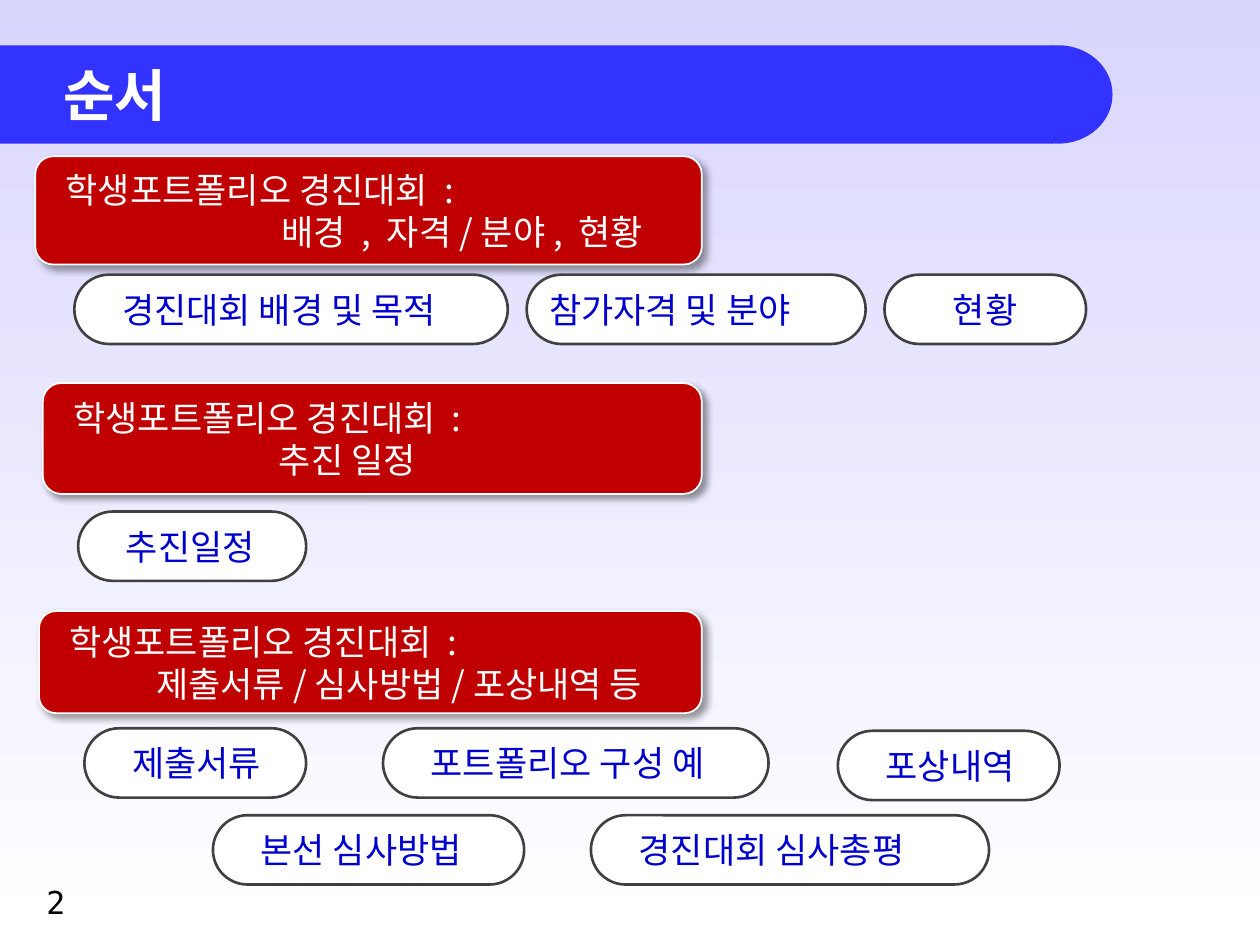
from lxml import etree
from pptx import Presentation, util as u
from pptx.dml.color import RGBColor
from pptx.enum import shapes, text
from pptx.oxml import ns

COLS, ROWS = 100, 75
WIDE, HIGH = u.Inches(10), u.Inches(7.5)
FONT, MONO = "Noto Sans CJK KR", "DejaVu Sans Mono"
LILAC = RGBColor(0xD9, 0xD6, 0xFE)
WHITE = RGBColor(0xFF, 0xFF, 0xFF)
BLACK = RGBColor(0, 0, 0)
BLUE = RGBColor(0x33, 0x33, 0xFF)
NAVY = RGBColor(0, 0, 0xCC)
RED = RGBColor(0xC0, 0, 0)
GRAY = RGBColor(0x40, 0x40, 0x40)
KIND = shapes.MSO_SHAPE
LEFT, MID = text.PP_ALIGN.LEFT, text.PP_ALIGN.CENTER
HEAD = "학생포트폴리오 경진대회  :"
PILL = 5.5

SECTS = [
    ((2.8, 12.4, 52.9, 8.6), "배경  ,  자격 / 분야 ,  현황", 1.91,
     [("경진대회 배경 및 목적", 3.1, 9.4, 34.4, -0.4, LEFT),
      ("참가자격 및 분야", 39, 9.4, 26.9, -0.6, LEFT),
      ("현황", 67.4, 9.4, 16, -0.6, MID)]),
    ((3.4, 30.4, 52.3, 8.8), "추진 일정", 1.83,
     [("추진일정", 2.8, 10.2, 18.1, -0.4, LEFT)]),
    ((3.1, 48.5, 52.6, 8.1), "제출서류 / 심사방법 / 포상내역 등", 0.89,
     [("제출서류", 3.6, 9.3, 17.6, -0.4, LEFT),
      ("포트폴리오 구성 예", 27.3, 9.3, 30.6, -0.4, LEFT),
      ("포상내역", 63.4, 9.5, 17.6, -0.4, LEFT),
      ("본선 심사방법", 13.8, 16.2, 24.7, -0.4, LEFT),
      ("경진대회 심사총평", 43.8, 16.2, 31.6, -0.4, LEFT)]),
]


def place(box):
    x, y, w, h = box
    return (int(x * WIDE / COLS), int(y * HIGH / ROWS),
            int(w * WIDE / COLS), int(h * HIGH / ROWS))


def write(para, words, size, color, font=FONT, bold=False, left=0, first=0, align=LEFT):
    props = para._p.get_or_add_pPr()
    props.set("marL", str(u.Inches(left)))
    props.set("indent", str(u.Inches(first)))
    para.alignment = align
    run = para.add_run()
    run.text = words
    run.font.size, run.font.name, run.font.bold = u.Pt(size), font, bold
    run.font.color.rgb = color
    face = etree.SubElement(run._r.get_or_add_rPr(), ns.qn("a:ea"))
    face.set("typeface", font)


def draw(slide, kind, box, fill, line=None, width=1):
    shape = slide.shapes.add_shape(kind, *place(box))
    shape.shadow.inherit = False
    shape.fill.solid()
    shape.fill.fore_color.rgb = fill
    if line is None:
        shape.line.fill.background()
    else:
        shape.line.color.rgb = line
        shape.line.width = u.Pt(width)
    shape.text_frame.vertical_anchor = text.MSO_ANCHOR.MIDDLE
    return shape


def shade(shape):
    glow = shape._element.spPr.find(ns.qn("a:effectLst"))
    drop = etree.SubElement(glow, ns.qn("a:outerShdw"), blurRad=str(u.Pt(4)),
                            dist=str(u.Pt(3)), dir="2700000", algn="tl", rotWithShape="0")
    tint = etree.SubElement(drop, ns.qn("a:srgbClr"), val=str(BLACK))
    etree.SubElement(tint, ns.qn("a:alpha"), val="40000")


def wash(slide):
    fill = slide.background.fill
    fill.gradient()
    fill.gradient_angle = 270
    for stop, color, pos in zip(fill.gradient_stops, (LILAC, WHITE), (0, 1)):
        stop.color.rgb, stop.position = color, pos


def banner(slide, box, words):
    x, y, w, h = box
    cap = 8.6
    draw(slide, KIND.OVAL, (x + w - cap / 2 - 0.3 + 0.7, y, cap, h), BLUE)
    title = slide.shapes.title
    title.left, title.top, title.width, title.height = place(box)
    title.fill.solid()
    title.fill.fore_color.rgb = BLUE
    frame = title.text_frame
    frame.vertical_anchor = text.MSO_ANCHOR.MIDDLE
    write(frame.paragraphs[0], words, 32, WHITE, bold=True, left=0.4)


def card(slide, box, words, shift):
    shape = draw(slide, KIND.ROUNDED_RECTANGLE, box, RED, WHITE)
    shade(shape)
    frame = shape.text_frame
    frame.margin_left = frame.margin_right = frame.margin_top = frame.margin_bottom = 0
    frame.word_wrap = True
    write(frame.paragraphs[0], HEAD, 20, WHITE, first=0.2)
    write(frame.add_paragraph(), words, 20, WHITE, first=shift)


def pill(slide, box, words, first, align):
    shape = draw(slide, KIND.ROUNDED_RECTANGLE, box, WHITE, GRAY, 1.5)
    shape.adjustments[0] = 0.5
    shape.text_frame.word_wrap = False
    write(shape.text_frame.paragraphs[0], words, 20, NAVY,
          left=0.6, first=first, align=align)


def section(slide, box, words, shift, pills):
    card(slide, box, words, shift)
    for name, dx, dy, w, first, align in pills:
        pill(slide, (box[0] + dx, box[1] + dy, w, PILL), name, first, align)


def number(slide, box, words):
    frame = slide.shapes.add_textbox(*place(box)).text_frame
    frame.word_wrap = True
    write(frame.paragraphs[0], words, 18, BLACK, MONO)


def main():
    deck = Presentation()
    deck.slide_width, deck.slide_height = WIDE, HIGH
    slide = deck.slides.add_slide(deck.slide_layouts[5])
    wash(slide)
    banner(slide, (0, 3.6, 83.6, 7.8), "순서")
    for sect in SECTS:
        section(slide, *sect)
    number(slide, (2.7, 69.6, 5.6, 4), "2")
    deck.save("out.pptx")


if __name__ == "__main__":
    main()
